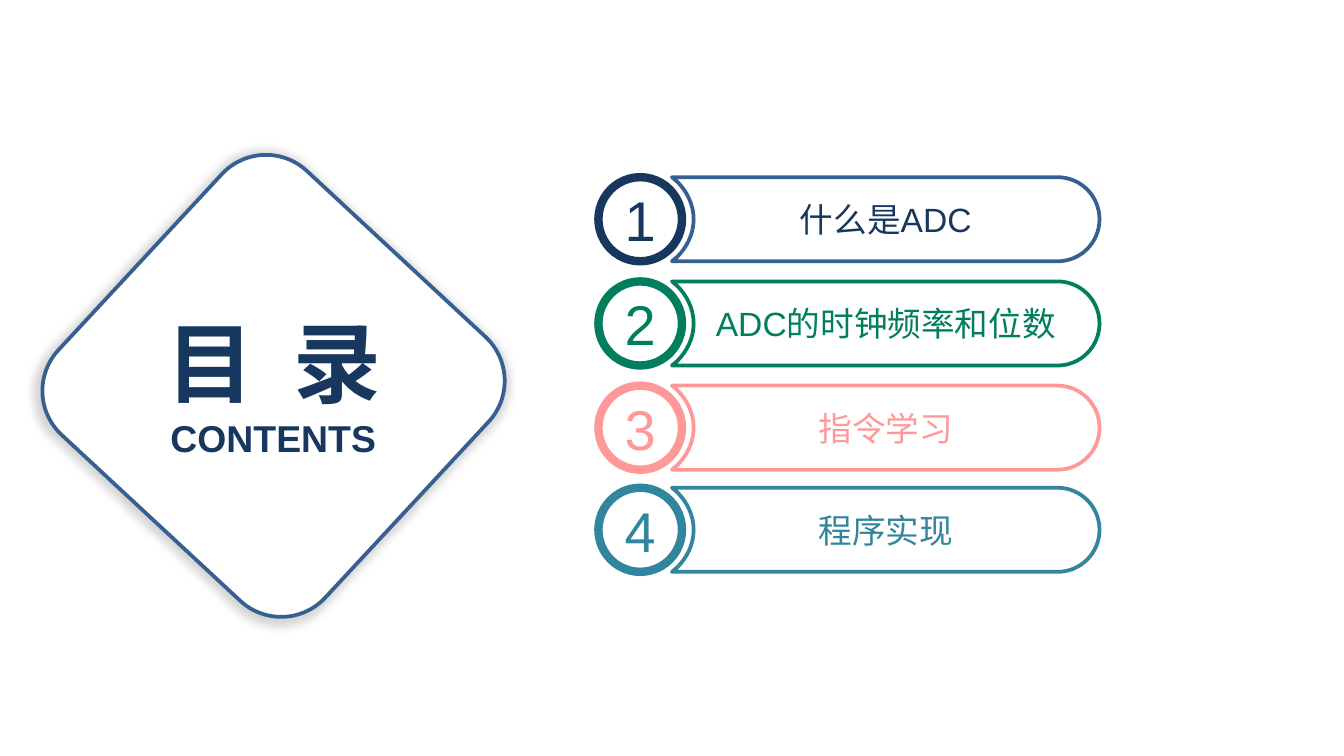
from lxml.etree import SubElement
from pptx import Presentation
from pptx.dml.color import RGBColor
from pptx.enum.shapes import MSO_SHAPE
from pptx.enum.text import MSO_ANCHOR, PP_ALIGN
from pptx.oxml.ns import qn
from pptx.util import Cm, Pt

NAVY = RGBColor(0x17, 0x37, 0x5E)
BLUE = RGBColor(0x37, 0x60, 0x92)
GREEN = RGBColor(0x00, 0x7E, 0x5D)
PINK = RGBColor(0xFF, 0x99, 0x99)
TEAL = RGBColor(0x31, 0x85, 0x9C)
WHITE = RGBColor(0xFF, 0xFF, 0xFF)


def write(holder, pieces, size, color, bold=False, anchor=MSO_ANCHOR.MIDDLE):
    frame = holder.text_frame
    frame.word_wrap = True
    frame.vertical_anchor = anchor
    frame.margin_left = frame.margin_right = frame.margin_top = frame.margin_bottom = 0
    paragraph = frame.paragraphs[0]
    paragraph.alignment = PP_ALIGN.CENTER
    for piece in pieces:
        paragraph.add_run().text = piece
    paragraph.font.name = "Arial"
    paragraph.font.size = Pt(size)
    paragraph.font.bold = bold
    paragraph.font.color.rgb = color
    return paragraph


prs = Presentation()
prs.slide_width, prs.slide_height = Cm(25.4), Cm(14.29)
slide = prs.slides.add_slide(prs.slide_layouts[6])
shapes = slide.shapes

diamond = shapes.add_shape(MSO_SHAPE.ROUNDED_RECTANGLE, Cm(1.73), Cm(3.89), Cm(6.88), Cm(6.81))
diamond.rotation = 42.9
diamond.fill.solid()
diamond.fill.fore_color.rgb = WHITE
diamond.line.color.rgb = BLUE
diamond.line.width = Pt(2)
diamond.shadow.inherit = False
effects = diamond.element.spPr.find(qn("a:effectLst"))
glow = SubElement(effects, qn("a:outerShdw"), blurRad="63500", sx="102000", sy="102000",
                  algn="ctr", rotWithShape="0")
shade = SubElement(glow, qn("a:srgbClr"), val="000000")
SubElement(shade, qn("a:alpha"), val="16000")

height = 1.59
half = height / 2
pill_left, pill_right, notch = 12.7, 20.78, 13.11
cap = pill_right - half
ring_left, ring_width = 11.31, 1.58
chapters = [
    (3.35, "什么是ADC", NAVY, BLUE),
    (5.32, "ADC的时钟频率和位数", GREEN, GREEN),
    (7.29, "指令学习", PINK, PINK),
    (9.22, "程序实现", TEAL, TEAL),
]
pill_outline = [
    (cap, -half),
    (cap + 0.44, -half), (pill_right, -0.44), (pill_right, 0),
    (pill_right, 0.44), (cap + 0.44, half), (cap, half),
    (pill_left, half),
    (12.8, 0.71),
    (12.98, 0.53), (notch, 0.28), (notch, 0),
    (notch, -0.28), (12.98, -0.53), (12.8, -0.71),
]
curve_starts = [1, 4, 9, 12]

for number, (top, title, color, outline) in enumerate(chapters, 1):
    builder = shapes.build_freeform(Cm(pill_left), Cm(top))
    builder.add_line_segments([(Cm(x), Cm(top + half + y)) for x, y in pill_outline])
    pill = builder.convert_to_shape()
    segments = list(pill.element.iter(qn("a:lnTo")))
    for start in curve_starts:
        curve = segments[start]
        curve.tag = qn("a:cubicBezTo")
        for control in segments[start + 1:start + 3]:
            curve.append(control[0])
            control.getparent().remove(control)
    pill.fill.background()
    pill.line.color.rgb = outline
    pill.line.width = Pt(2)
    pill.shadow.inherit = False
    write(pill, [title], 18, color)

    ring = shapes.add_shape(MSO_SHAPE.OVAL, Cm(ring_left), Cm(top), Cm(ring_width), Cm(height))
    ring.fill.solid()
    ring.fill.fore_color.rgb = WHITE
    ring.line.color.rgb = color
    ring.line.width = Pt(4.5)
    ring.shadow.inherit = False
    write(ring, [str(number)], 30, color)

heading = shapes.add_textbox(Cm(2.34), Cm(5.82), Cm(5.66), Cm(2.01))
heading_line = write(heading, ["目", " ", "录"], 47, NAVY, bold=True)
heading_line.runs[1].font._element.set("spc", "1030")
subheading = shapes.add_textbox(Cm(2.36), Cm(7.85), Cm(5.61), Cm(0.86))
write(subheading, ["CONTENTS"], 20, NAVY, bold=True, anchor=MSO_ANCHOR.TOP)

prs.save("out.pptx")
